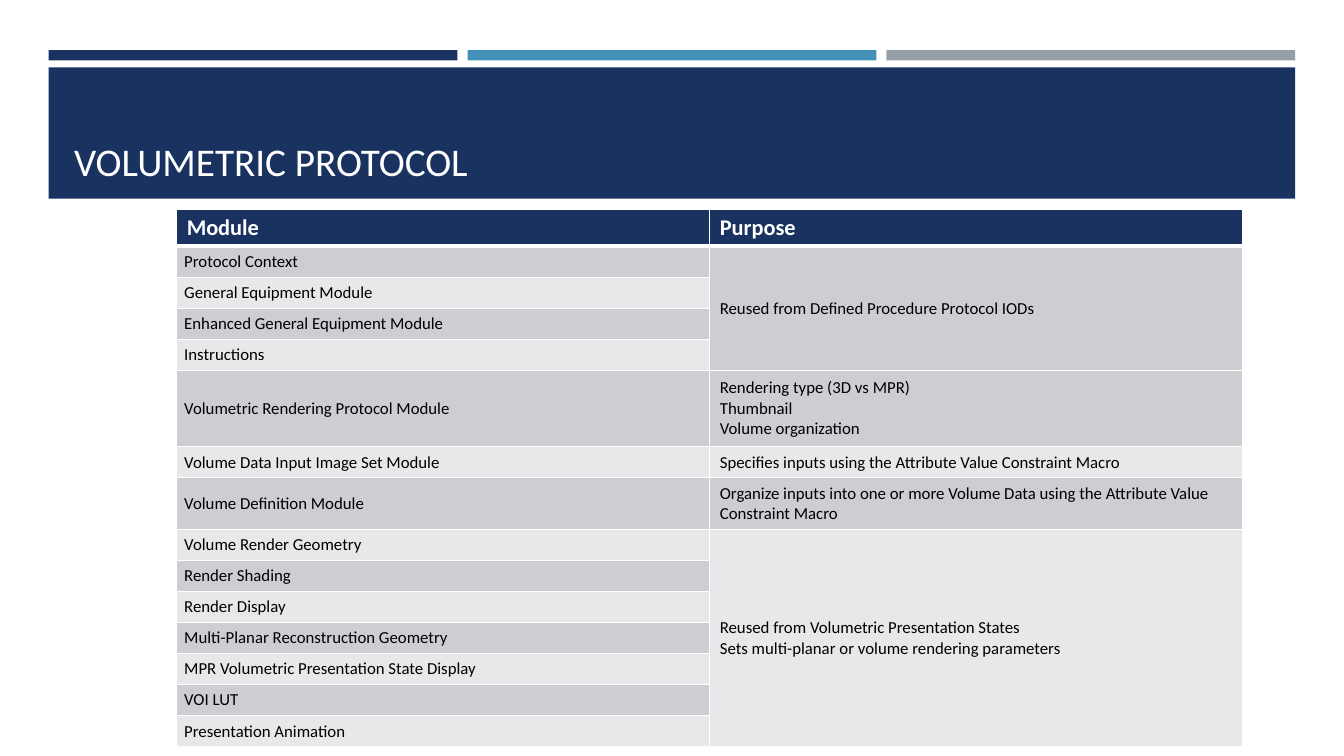
from dataclasses import dataclass

from lxml import etree
from pptx import Presentation
from pptx.dml.color import RGBColor
from pptx.enum.shapes import MSO_SHAPE as SHAPE
from pptx.enum.text import MSO_ANCHOR as ANCHOR
from pptx.oxml.ns import qn
from pptx.util import Pt


@dataclass(frozen=True)
class Theme:
    font: str = "Calibri"
    navy: str = "1A3260"
    blue: str = "4590B8"
    grey: str = "969FA7"
    white: str = "FFFFFF"
    black: str = "000000"
    bands: tuple = ("CDCED2", "E8E8EA")
    title_size: float = 28
    head_size: float = 16
    body_size: float = 12


T = Theme()
ROW, HEAD_ROW = 22.2, 26.3

# Each group: modules, the purpose they share, row height
GROUPS = [
    (["Protocol Context", "General Equipment Module",
      "Enhanced General Equipment Module", "Instructions"],
     ["Reused from Defined Procedure Protocol IODs"], ROW),
    (["Volumetric Rendering Protocol Module"],
     ["Rendering type (3D vs MPR)", "Thumbnail", "Volume organization"], 54.5),
    (["Volume Data Input Image Set Module"],
     ["Specifies inputs using the Attribute Value Constraint Macro"], ROW),
    (["Volume Definition Module"],
     ["Organize inputs into one or more Volume Data using the "
      "Attribute Value Constraint Macro"], 36.8),
    (["Volume Render Geometry", "Render Shading", "Render Display",
      "Multi-Planar Reconstruction Geometry",
      "MPR Volumetric Presentation State Display", "VOI LUT",
      "Presentation Animation"],
     ["Reused from Volumetric Presentation States",
      "Sets multi-planar or volume rendering parameters"], ROW),
]


def rgb(color):
    return RGBColor.from_string(color)


def write(tf, *lines, size=T.body_size, color=T.black, bold=False):
    for i, line in enumerate(lines):
        p = tf.paragraphs[0] if i == 0 else tf.add_paragraph()
        r = p.add_run()
        r.text = line
        r.font.name, r.font.size, r.font.bold = T.font, Pt(size), bold
        r.font.color.rgb = rgb(color)


def add_bar(slide, x, y, w, h, color):
    sp = slide.shapes.add_shape(SHAPE.RECTANGLE, Pt(x), Pt(y), Pt(w), Pt(h))
    sp.shadow.inherit = False
    sp.fill.solid()
    sp.fill.fore_color.rgb = rgb(color)
    sp.line.fill.background()


def set_borders(cell, bottom=1):
    tc_pr = cell._tc.get_or_add_tcPr()
    widths = {"lnL": 1, "lnR": 1, "lnT": 1, "lnB": bottom}
    for i, (tag, width) in enumerate(widths.items()):
        ln = etree.Element(qn(f"a:{tag}"), w=str(Pt(width)))
        fill = etree.SubElement(ln, qn("a:solidFill"))
        etree.SubElement(fill, qn("a:srgbClr"), val=T.white)
        tc_pr.insert(i, ln)


def style_cell(cell, fill, bottom=1):
    cell.fill.solid()
    cell.fill.fore_color.rgb = rgb(fill)
    cell.vertical_anchor = ANCHOR.MIDDLE
    set_borders(cell, bottom)


def add_header(slide, x, y, w, h, title):
    # Three accent strips
    gap, strip = 7.2, 7.4
    strip_w = (w - 2 * gap) / 3
    for i, color in enumerate((T.navy, T.blue, T.grey)):
        add_bar(slide, x + i * (strip_w + gap), y, strip_w, strip, color)
    # Title band
    top = y + 12.4
    add_bar(slide, x, top, w, h - 12.4, T.navy)
    sp = slide.shapes.add_textbox(Pt(x + 11), Pt(top + 7), Pt(w - 22), Pt(80))
    tf = sp.text_frame
    tf.word_wrap = True
    tf.vertical_anchor = ANCHOR.BOTTOM
    write(tf, title, size=T.title_size, color=T.white)


def add_module_table(slide, x, y, w, groups):
    heights = [HEAD_ROW] + [h for names, _, h in groups for _ in names]
    table = slide.shapes.add_table(
        len(heights), 2, Pt(x), Pt(y), Pt(w), Pt(sum(heights))).table
    for col in table.columns:
        col.width = Pt(w / 2)
    for row, height in zip(table.rows, heights):
        row.height = Pt(height)
    # Header row
    for cell, label in zip(table.rows[0].cells, ("Module", "Purpose")):
        style_cell(cell, T.navy, bottom=3)
        write(cell.text_frame, label, size=T.head_size, color=T.white, bold=True)
    # Modules on the left, shared purpose merged on the right
    row = 1
    for names, purpose, _ in groups:
        first = row
        for name in names:
            left, right = table.cell(row, 0), table.cell(row, 1)
            style_cell(left, T.bands[(row - 1) % 2])
            style_cell(right, T.bands[(first - 1) % 2])
            left.margin_left = left.margin_right = Pt(5.4)
            left.margin_top = left.margin_bottom = Pt(2.9)
            write(left.text_frame, name)
            row += 1
        shared = table.cell(first, 1)
        if len(names) > 1:
            shared.merge(table.cell(row - 1, 1))
        write(shared.text_frame, *purpose)


def main():
    prs = Presentation()
    prs.slide_width, prs.slide_height = Pt(960), Pt(540)
    slide = prs.slides.add_slide(prs.slide_layouts[6])
    add_header(slide, 34.8, 35.8, 890.4, 106.2, "VOLUMETRIC PROTOCOL")
    add_module_table(slide, 126.2, 149.4, 761.6, GROUPS)
    prs.save("out.pptx")


if __name__ == "__main__":
    main()
